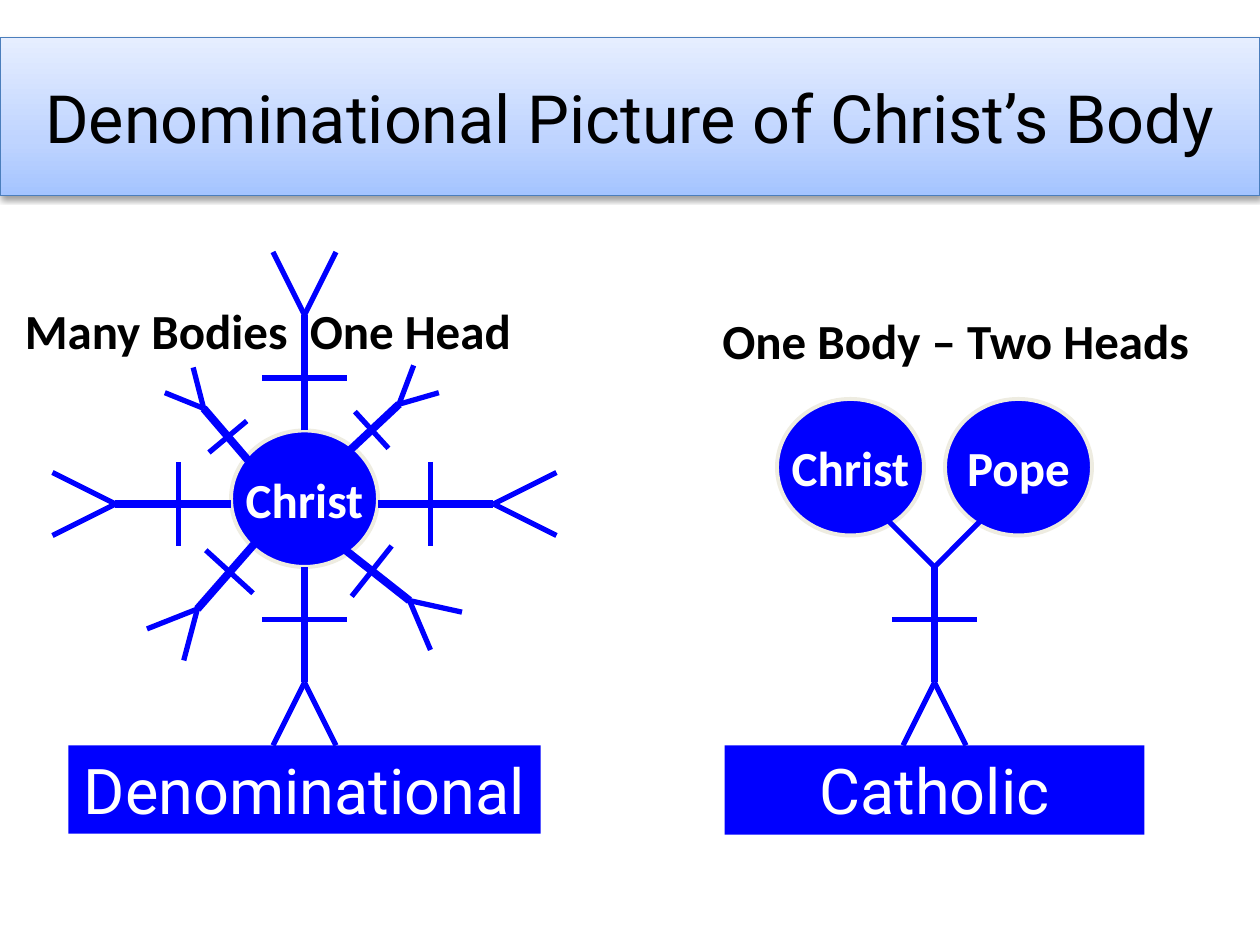
from copy import deepcopy

from lxml.etree import SubElement
from pptx import Presentation
from pptx.dml.color import RGBColor
from pptx.enum.shapes import MSO_CONNECTOR, MSO_SHAPE
from pptx.enum.text import MSO_ANCHOR, MSO_AUTO_SIZE, PP_ALIGN
from pptx.oxml import parse_xml
from pptx.oxml.ns import nsdecls, qn
from pptx.util import Inches, Pt

COLS, ROWS = 120, 90
BLUE, WHITE, BLACK, CREAM = "0000FF", "FFFFFF", "000000", "EEECE1"
SHADOW = f"""<a:effectLst {nsdecls("a")}>
  <a:outerShdw blurRad="40000" dist="20000" dir="5400000" rotWithShape="0">
    <a:srgbClr val="000000"><a:alpha val="38000"/></a:srgbClr>
  </a:outerShdw>
</a:effectLst>"""


def paint(code):
    return RGBColor.from_string(code)


class Board:
    """Draws on one slide; all lengths are columns and rows of the grid."""

    def __init__(self, deck):
        self.deck = deck
        self.slide = deck.slides.add_slide(deck.slide_layouts[5])
        self.shapes = self.slide.shapes

    def col(self, n):
        return round(self.deck.slide_width * n / COLS)

    def row(self, n):
        return round(self.deck.slide_height * n / ROWS)

    def area(self, x, y, w, h):
        return self.col(x), self.row(y), self.col(w), self.row(h)

    def letter(self, shape, text, size, face, tint, bold=False,
               anchor=MSO_ANCHOR.TOP, wrap=True):
        frame = shape.text_frame
        frame.text = text
        frame.word_wrap = wrap
        frame.auto_size = MSO_AUTO_SIZE.NONE
        frame.vertical_anchor = anchor
        para = frame.paragraphs[0]
        para.alignment = PP_ALIGN.CENTER
        font = para.font
        font.size, font.name, font.bold = Pt(size), face, bold
        font.color.rgb = paint(tint)

    def title(self, text, box, stops):
        shape = self.shapes.title
        shape.left, shape.top, shape.width, shape.height = self.area(*box)
        shape.fill.gradient()
        shape.fill.gradient_angle = 90
        stack = shape._element.spPr.find(".//" + qn("a:gsLst"))
        stack.append(deepcopy(stack[-1]))
        for stop, (place, tint) in zip(shape.fill.gradient_stops, stops):
            stop.position = place
            stop.color.rgb = paint(tint)
        shape.line.color.rgb = paint("4B7EBC")
        shape.line.width = Pt(0.75)
        shape._element.spPr.append(parse_xml(SHADOW))
        self.letter(shape, text, 38, "Roboto", BLACK, anchor=MSO_ANCHOR.MIDDLE)

    def solid(self, kind, box):
        shape = self.shapes.add_shape(kind, *self.area(*box))
        shape.shadow.inherit = False
        shape.fill.solid()
        shape.fill.fore_color.rgb = paint(BLUE)
        return shape

    def head(self, text, x, y):
        shape = self.solid(MSO_SHAPE.OVAL, (x, y, 14, 13))
        shape.line.color.rgb = paint(CREAM)
        shape.line.width = Pt(2.25)
        self.letter(shape, text, 28, "Calibri", WHITE, True, MSO_ANCHOR.MIDDLE, False)

    def plate(self, text, *box):
        shape = self.solid(MSO_SHAPE.RECTANGLE, box)
        shape.line.fill.background()
        self.letter(shape, text, 36, "Roboto", WHITE)

    def label(self, text, *box):
        shape = self.shapes.add_textbox(*self.area(*box))
        self.letter(shape, text, 28, "Calibri", BLACK, True)

    def stroke(self, start, end, width=3):
        line = self.shapes.add_connector(
            MSO_CONNECTOR.STRAIGHT,
            self.col(start[0]), self.row(start[1]), self.col(end[0]), self.row(end[1]))
        line.line.color.rgb = paint(BLUE)
        line.line.width = Pt(width)
        SubElement(line._element.spPr, qn("a:effectLst"))

    def figure(self, neck, hip, hands, feet):
        self.stroke(neck, hip, 4.5)
        self.stroke(*hands)
        for foot in feet:
            self.stroke(hip, foot)

    def upright(self, x, y, dx, dy):
        """Regular figure that grows from its neck in direction dx, dy."""
        def spot(along, side):
            return x + dx * along - dy * side, y + dy * along + dx * side

        self.figure((x, y), spot(11, 0), [spot(5, s) for s in (-4, 4)],
                    [spot(17, s) for s in (-3, 3)])


# neck, hip, hands, feet
SLANTED = [
    ((32.4, 52), (39, 57.2), [(33.5, 56.8), (37.3, 52)], [(41, 61.9), (44, 58.3)]),
    ((24.4, 51.6), (18.8, 58), [(19.6, 52.4), (24.1, 56.5)], [(14, 59.9), (17.5, 62.9)]),
    ((33.2, 43), (38, 38.5), [(37, 42.7), (33.8, 39.2)], [(41.8, 37.4), (39.4, 34.8)]),
    ((23.6, 43.8), (19.4, 38.9), [(23.5, 40.1), (19.9, 43.1)], [(18.4, 35), (15.7, 37.4)]),
]


def main():
    deck = Presentation()
    deck.slide_width, deck.slide_height = Inches(10), Inches(7.5)
    board = Board(deck)
    board.title("Denominational Picture of Christ’s Body", (0, 3.6, COLS, 15),
                [(0, "A4C4FF"), (0.35, "BFD4FF"), (1, "E6EEFF")])

    board.head("Christ", 22, 41)
    for ray in [(29, 54, 0, 1), (36, 48, 1, 0), (22, 48, -1, 0), (29, 41, 0, -1)]:
        board.upright(*ray)

    board.upright(89, 54, 0, 1)
    for name, left, chin in [("Pope", 90, 94), ("Christ", 74, 84)]:
        board.head(name, left, 38)
        board.stroke((89, 54), (chin, 49))

    board.plate("Denominational", 6.5, 71, 45, 8.4)
    board.plate("Catholic", 69, 71, 40, 8.5)
    board.label("Many Bodies  One Head", 0, 28, 51, 6.8)
    board.label("One Body – Two Heads", 65, 29, 52, 6.8)
    for parts in SLANTED:
        board.figure(*parts)

    deck.save("out.pptx")


if __name__ == "__main__":
    main()
